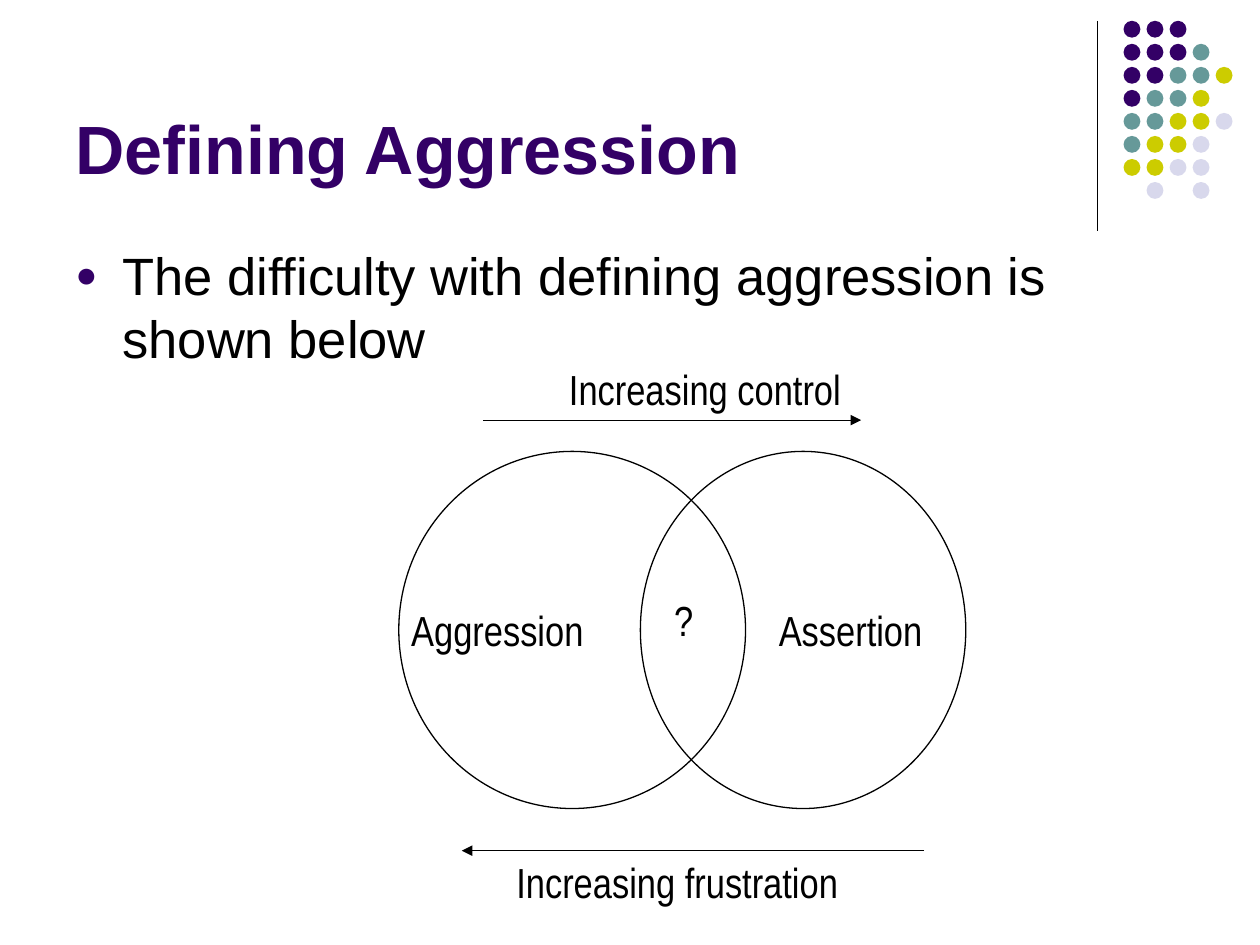
from pptx import Presentation
from pptx.dml.color import RGBColor as RGB
from pptx.enum.shapes import MSO_CONNECTOR as Link, MSO_SHAPE as Kind
from pptx.enum.text import MSO_ANCHOR as Anchor, PP_ALIGN as Align
from pptx.oxml.ns import qn
from pptx.util import Cm, Pt
from lxml.etree import SubElement as Sub

HUES = {"ink": "000000", "plum": "330066", "teal": "669999",
        "lime": "CCCC00", "mist": "D8D8EC"}
FONTS = {
    "title": {"name": "Arial", "size": Pt(39), "bold": True},
    "body": {"name": "Arial", "size": Pt(30)},
    "label": {"name": "Arial Narrow", "size": Pt(24)},
}


class Deck:
    def __init__(self, wide, high):
        self.prs = Presentation()
        self.prs.slide_width, self.prs.slide_height = Cm(wide), Cm(high)
        self.slide = self.prs.slides.add_slide(self.prs.slide_layouts[5])
        self.shapes = self.slide.shapes

    def hue(self, name):
        return RGB.from_string(HUES[name])

    def words(self, shape, text, style, hue="ink", anchor=Anchor.TOP):
        frame = shape.text_frame
        frame.word_wrap, frame.vertical_anchor = True, anchor
        para = frame.paragraphs[0]
        para.alignment = Align.LEFT
        run = para.add_run()
        run.text = text
        for key, value in FONTS[style].items():
            setattr(run.font, key, value)
        run.font.color.rgb = self.hue(hue)
        return para

    def title(self, text, *box):
        shape = self.shapes.title
        for key, value in zip(("left", "top", "width", "height"), box):
            setattr(shape, key, Cm(value))
        self.words(shape, text, "title", "plum", Anchor.BOTTOM)

    def text(self, text, *box, style="label"):
        shape = self.shapes.add_textbox(*map(Cm, box))
        return self.words(shape, text, style)

    def bullet(self, text, *box):
        para = self.text(text, *box, style="body")
        para.space_before = Pt(6)
        props = para._p.get_or_add_pPr()
        props.set("marL", str(Cm(0.95)))
        props.set("indent", str(-Cm(0.95)))
        tint = Sub(props, qn("a:buClr"))
        Sub(tint, qn("a:srgbClr"), val=HUES["plum"])
        Sub(props, qn("a:buSzPct"), val="70000")
        Sub(props, qn("a:buFont"), typeface="Arial")
        Sub(props, qn("a:buChar"), char="●")

    def oval(self, *box, fill=None):
        shape = self.shapes.add_shape(Kind.OVAL, *map(Cm, box))
        shape.shadow.inherit = False
        if fill:
            shape.fill.solid()
            shape.fill.fore_color.rgb = self.hue(fill)
            shape.line.fill.background()
        else:
            shape.fill.background()
            shape.line.color.rgb = self.hue("ink")
            shape.line.width = Pt(0.75)

    def line(self, *ends, arrow=False):
        link = self.shapes.add_connector(Link.STRAIGHT, *map(Cm, ends))
        link.line.color.rgb = self.hue("ink")
        link.line.width = Pt(0.75)
        props = link._element.spPr
        if arrow:
            Sub(props.find(qn("a:ln")), qn("a:tailEnd"), type="triangle")
        Sub(props, qn("a:effectLst"))


def main():
    deck = Deck(25.4, 19.05)

    # Corner rule and dot grid, one letter per dot
    deck.line(22.12, 0.42, 22.12, 4.66)
    names = {"P": "plum", "T": "teal", "L": "lime", "M": "mist"}
    rows = ("PPP", "PPPT", "PPTTL", "PTTL", "TTLLM", "TLLM", "LLMM", ".M.M")
    step = 3.25 / 7
    for row, marks in enumerate(rows):
        for col, mark in enumerate(marks):
            if mark in names:
                deck.oval(22.65 + col * step, 0.42 + row * step, 0.34, 0.34,
                          fill=names[mark])

    # Title and opening point
    deck.title("Defining Aggression", 1.27, 0.33, 20.96, 3.6)
    deck.bullet("The difficulty with defining aggression is shown below",
                1.27, 4.78, 22.86, 12.24)

    # Overlapping circles
    deck.oval(8.04, 9.1, 6.99, 7.2)
    deck.oval(12.91, 9.1, 6.56, 7.2)
    deck.text("Assertion", 15.45, 12.07, 5.29, 1.27)
    deck.text("Aggression", 8.04, 12.07, 4.66, 1.27)
    deck.text("?", 13.34, 11.85, 1.48, 1.27)

    # Opposing trends
    deck.line(9.74, 8.47, 17.36, 8.47, arrow=True)
    deck.line(18.63, 17.15, 9.31, 17.15, arrow=True)
    deck.text("Increasing control", 11.22, 7.2, 8.26, 1.27)
    deck.text("Increasing frustration", 10.16, 17.15, 9.1, 1.27)

    deck.prs.save("out.pptx")


if __name__ == "__main__":
    main()
